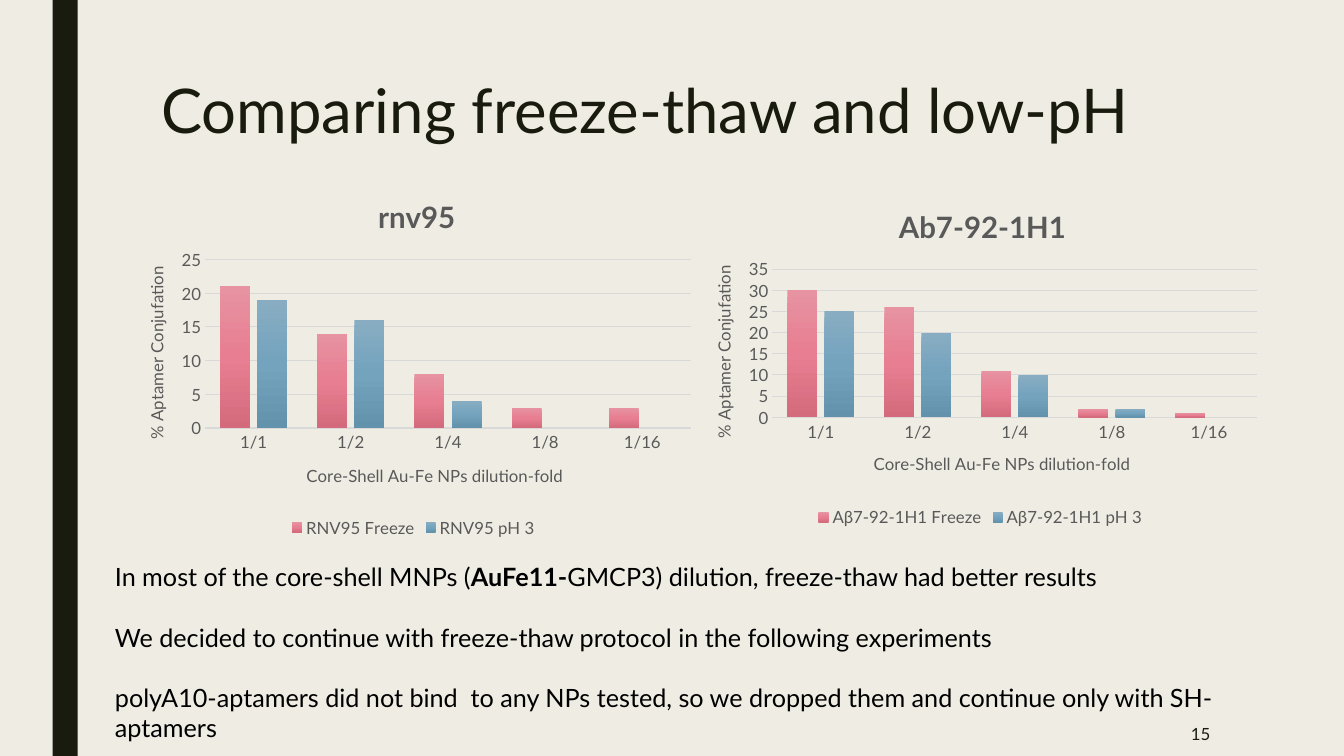
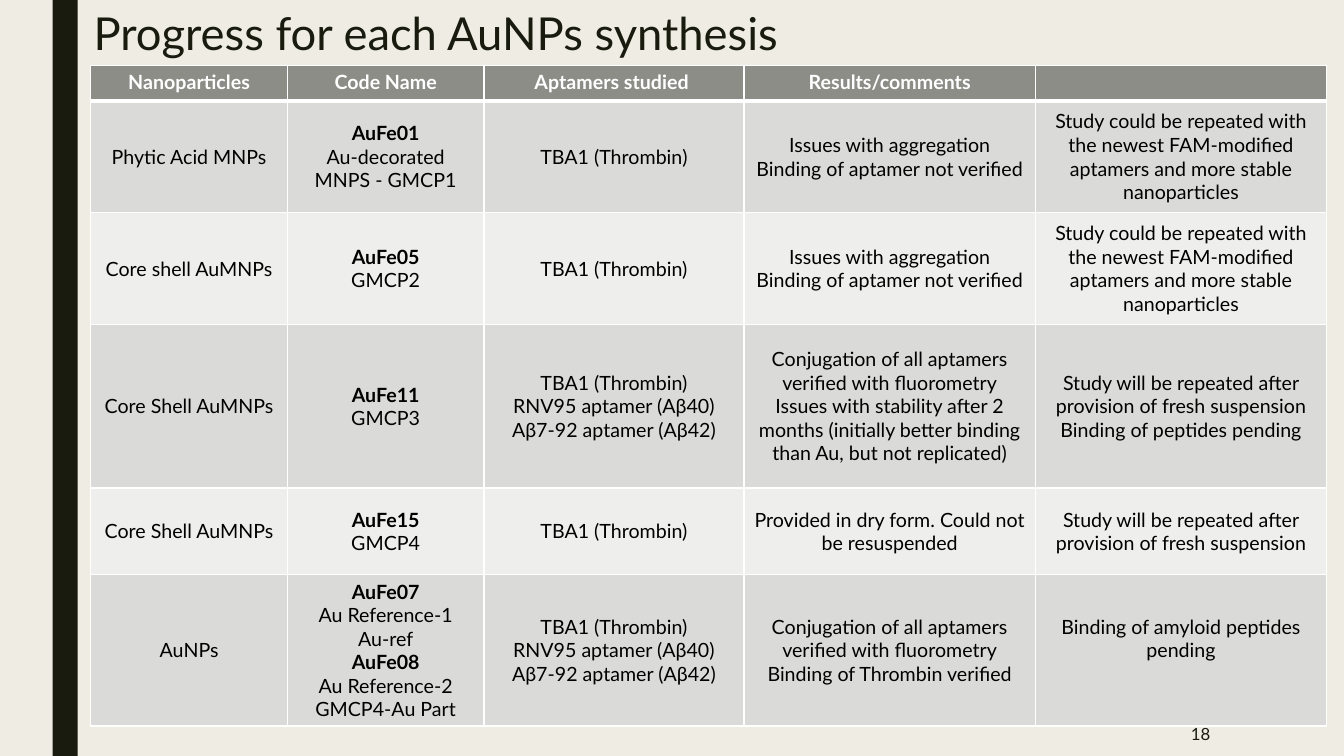
from copy import deepcopy
from dataclasses import dataclass

from lxml import etree
from pptx import Presentation
from pptx.chart.data import CategoryChartData
from pptx.dml.color import RGBColor
from pptx.enum.chart import XL_CHART_TYPE, XL_LEGEND_POSITION, XL_TICK_MARK
from pptx.enum.shapes import MSO_SHAPE
from pptx.enum.text import MSO_ANCHOR, MSO_AUTO_SIZE, PP_ALIGN
from pptx.oxml.ns import qn
from pptx.util import Pt

COLUMN = XL_CHART_TYPE.COLUMN_CLUSTERED
BELOW = XL_LEGEND_POSITION.BOTTOM
NO_TICK = XL_TICK_MARK.NONE
RECT = MSO_SHAPE.RECTANGLE
TOP, MIDDLE = MSO_ANCHOR.TOP, MSO_ANCHOR.MIDDLE
NO_FIT = MSO_AUTO_SIZE.NONE
LEFT, CENTER, RIGHT = PP_ALIGN.LEFT, PP_ALIGN.CENTER, PP_ALIGN.RIGHT

FACE = "Lato"
CREAM, DARK, BLACK, WHITE = "EFEDE3", "191B0E", "000000", "FFFFFF"
GRAY, RULE = "595959", "D9D9D9"
HEAD, ODD, EVEN = "8C8D86", "DADBD9", "EEEEED"
BLENDS = (("E793A2", "E77E91", "D36B7D"), ("88ADC3", "74A3BE", "6392AD"))
FOLDS = ("1/1", "1/2", "1/4", "1/8", "1/16")


@dataclass
class Box:
    left: float
    top: float
    width: float
    height: float

    def lengths(self) -> tuple:
        return Pt(self.left), Pt(self.top), Pt(self.width), Pt(self.height)


@dataclass
class Graph:
    title: str
    box: Box
    high: int
    series: dict
    plot: tuple
    title_at: tuple
    fold_at: tuple
    value_at: tuple


GRAPHS = (
    Graph("rnv95", Box(88.6, 125.3, 413.3, 261.4), 25,
          {"RNV95 Freeze": (21, 14, 8, 3, 3),
           "RNV95 pH 3": (19, 16, 4, 0, 0)},
          (0.14, 0.23, 0.84, 0.46), (0.43, 0.04), (0.31, 0.78), (0.03, 0.24)),
    Graph("Ab7-92-1H1", Box(493.9, 133.2, 412.6, 246.2), 35,
          {"Αβ7-92-1Η1 Freeze": (30, 26, 11, 2, 1),
           "Αβ7-92-1Η1 pH 3": (25, 20, 10, 2, 0)},
          (0.14, 0.24, 0.84, 0.43), (0.35, 0.04), (0.31, 0.76), (0.03, 0.22)),
)

POINTS = (
    (("In most of the core-shell MNPs (", False), ("AuFe11-", True),
     ("GMCP3) dilution, freeze-thaw had better results", False)),
    (("We decided to continue with freeze-thaw protocol in the following experiments", False),),
    (("polyA10-aptamers did not bind  to any NPs tested, so we dropped them"
      " and continue only with SH-aptamers", False),),
)

WIDTHS = (140.4, 140.4, 185.8, 208.1, 208.1)
HEIGHTS = (25.2, 79.9, 79.9, 116.9, 61.9, 108)
THROMBIN = "TBA1 (Thrombin)"
TRIO = THROMBIN + "\nRNV95 aptamer (Αβ40)\nΑβ7-92 aptamer (Αβ42)"
ISSUES = "Issues with aggregation\nBinding of aptamer not verified "
RETRY = ("Study could be repeated with the newest FAM-modified aptamers"
         " and more stable nanoparticles")
FRESH = "Study will be repeated after provision of fresh suspension"
BOUND = "Conjugation of all aptamers verified with fluorometry"
ROWS = (
    ("Nanoparticles", "Code Name", "Aptamers studied ", "Results/comments", ""),
    ("Phytic Acid MNPs", "AuFe01\nAu-decorated MNPS - GMCP1", "ΤΒΑ1 (Thrombin)", ISSUES, RETRY),
    ("Core shell AuMNPs", "AuFe05\nGMCP2", THROMBIN, ISSUES, RETRY),
    ("Core Shell AuMNPs", "AuFe11\nGMCP3", TRIO,
     BOUND + "\nIssues with stability after 2 months"
     " (initially better binding than Au, but not replicated)",
     FRESH + "\nBinding of peptides pending"),
    ("Core Shell AuMNPs", "AuFe15\nGMCP4", THROMBIN,
     "Provided in dry form. Could not be resuspended", FRESH),
    ("AuNPs", "AuFe07\nAu Reference-1\nAu-ref\nAuFe08\nAu Reference-2\nGMCP4-Au Part", TRIO,
     BOUND + "\nBinding of Thrombin verified", "Binding of amyloid peptides pending"),
)


def color(code: str) -> RGBColor:
    return RGBColor.from_string(code)


def style(font, size: float, code: str, bold: bool = False) -> None:
    font.name = FACE
    font.size = Pt(size)
    font.bold = bold
    font.color.rgb = color(code)


def move(shape, box: Box) -> None:
    shape.left, shape.top, shape.width, shape.height = box.lengths()


def start(prs, layout: int, title: str, box: Box, size: float, number: str):
    slide = prs.slides.add_slide(prs.slide_layouts[layout])
    band = slide.shapes.add_shape(RECT, *Box(37.5, 0, 18, 540).lengths())
    band.shadow.inherit = False
    band.fill.solid()
    band.fill.fore_color.rgb = color(DARK)
    band.line.fill.background()

    head = slide.shapes.title
    move(head, box)
    frame = head.text_frame
    frame.text = title
    frame.auto_size = NO_FIT
    frame.vertical_anchor = TOP
    para = frame.paragraphs[0]
    para.alignment = LEFT
    para.line_spacing = 0.89
    style(para.font, size, DARK)

    note = slide.shapes.add_textbox(*Box(745.6, 508.3, 126, 31.7).lengths())
    frame = note.text_frame
    frame.text = number
    frame.word_wrap = True
    frame.vertical_anchor = MIDDLE
    para = frame.paragraphs[0]
    para.alignment = RIGHT
    style(para.font, 12, DARK)
    return slide


def place(owner, index: int, spot: tuple, inner: bool = False) -> None:
    for old in owner.findall(qn("c:layout")):
        owner.remove(old)
    layout = etree.Element(qn("c:layout"))
    manual = etree.SubElement(layout, qn("c:manualLayout"))
    pairs = [("layoutTarget", "inner")] if inner else []
    pairs += [("xMode", "edge"), ("yMode", "edge")]
    pairs += zip("xywh", spot)
    for tag, value in pairs:
        etree.SubElement(manual, qn("c:" + tag)).set("val", str(value))
    owner.insert(index, layout)


def label(title, text: str, size: float, bold: bool, spot: tuple) -> None:
    title.text_frame.text = text
    style(title.text_frame.paragraphs[0].font, size, GRAY, bold)
    place(title._element, 1, spot)


def blend(fill, codes: tuple) -> None:
    fill.gradient()
    fill.gradient_angle = 270
    stops = fill.gradient_stops[0]._gs.getparent()
    stops.append(deepcopy(stops[0]))
    for rank, (stop, code) in enumerate(zip(fill.gradient_stops, codes)):
        stop.position = rank / 2
        stop.color.rgb = color(code)


def draw_graph(slide, graph: Graph) -> None:
    data = CategoryChartData()
    data.categories = FOLDS
    for name, values in graph.series.items():
        data.add_series(name, values)
    chart = slide.shapes.add_chart(COLUMN, *graph.box.lengths(), data).chart
    style(chart.font, 12, GRAY)
    chart.has_title = True
    label(chart.chart_title, graph.title, 21, True, graph.title_at)
    chart.chart_title.include_in_layout = False
    chart.has_legend = True
    chart.legend.position = BELOW
    chart.legend.include_in_layout = False
    style(chart.legend.font, 12, GRAY)

    folds, values = chart.category_axis, chart.value_axis
    for axis, text, spot in (
        (folds, "Core-Shell Au-Fe NPs dilution-fold", graph.fold_at),
        (values, "% Aptamer Conjufation", graph.value_at),
    ):
        axis.major_tick_mark = axis.minor_tick_mark = NO_TICK
        style(axis.tick_labels.font, 12, GRAY)
        label(axis.axis_title, text, 12, False, spot)
    turn = values.axis_title.text_frame._txBody.find(qn("a:bodyPr"))
    turn.set("rot", "-5400000")
    turn.set("vert", "horz")
    folds.format.line.color.rgb = color(RULE)
    folds.format.line.width = Pt(1)
    values.format.line.fill.background()
    values.minimum_scale, values.maximum_scale = 0, graph.high
    values.major_unit = 5
    grid = values.major_gridlines.format.line
    grid.color.rgb = color(RULE)
    grid.width = Pt(0.75)

    plot = chart.plots[0]
    plot.gap_width, plot.overlap = 100, -24
    plot.vary_by_categories = False
    for series, codes in zip(plot.series, BLENDS):
        blend(series.format.fill, codes)
    place(chart._chartSpace.chart.plotArea, 0, graph.plot, True)


def draw_points(slide) -> None:
    body = slide.placeholders[1]
    move(body, Box(74.9, 397.4, 853.2, 138.2))
    frame = body.text_frame
    frame.auto_size = NO_FIT
    frame.vertical_anchor = TOP
    for rank, parts in enumerate(POINTS):
        para = frame.add_paragraph() if rank else frame.paragraphs[0]
        para.space_before = Pt(21.6 if rank else 0)
        style(para.font, 18, BLACK)
        for text, bold in parts:
            run = para.add_run()
            run.text = text
            if bold:
                run.font.bold = True
        props = para._p.get_or_add_pPr()
        props.set("marL", "0")
        props.set("indent", "0")
        props.find(qn("a:defRPr")).addprevious(etree.Element(qn("a:buNone")))


def edge(cell, sides: dict) -> None:
    props = cell._tc.get_or_add_tcPr()
    for rank, (side, width) in enumerate(sides.items()):
        line = etree.Element(qn("a:ln" + side), w=str(Pt(width)))
        fill = etree.SubElement(line, qn("a:solidFill"))
        etree.SubElement(fill, qn("a:srgbClr"), val=WHITE)
        props.insert(rank, line)


def draw_table(slide) -> None:
    box = Box(64.9, 46.8, sum(WIDTHS), sum(HEIGHTS))
    table = slide.shapes.add_table(len(ROWS), len(WIDTHS), *box.lengths()).table
    for column, width in zip(table.columns, WIDTHS):
        column.width = Pt(width)
    for rank, (row, height, texts) in enumerate(zip(table.rows, HEIGHTS, ROWS)):
        row.height = Pt(height)
        first = rank == 0
        for cell, text in zip(row.cells, texts):
            cell.text = text
            cell.vertical_anchor = TOP if first else MIDDLE
            cell.fill.solid()
            cell.fill.fore_color.rgb = color(HEAD if first else ODD if rank % 2 else EVEN)
            edge(cell, {"L": 1, "R": 1, "T": 3 if rank == 1 else 1, "B": 3 if first else 1})
            for para in cell.text_frame.paragraphs:
                para.alignment = CENTER
                bold = first or para.text.startswith("AuFe")
                style(para.font, 14, WHITE if first else BLACK, bold)
    table.cell(len(ROWS) - 1, len(WIDTHS) - 1).margin_bottom = Pt(20.4)


def main() -> None:
    prs = Presentation()
    prs.slide_width, prs.slide_height = Pt(960), Pt(540)
    back = prs.slide_master.background.fill
    back.solid()
    back.fore_color.rgb = color(CREAM)

    slide = start(prs, 1, "Comparing freeze-thaw and low-pH", Box(108, 54, 756, 116.6), 44, "15")
    for graph in GRAPHS:
        draw_graph(slide, graph)
    draw_points(slide)

    slide = start(prs, 5, "Progress for each AuNPs synthesis", Box(59.6, 5, 713.5, 41.8), 32.4, "18")
    draw_table(slide)
    prs.save("out.pptx")


if __name__ == "__main__":
    main()
